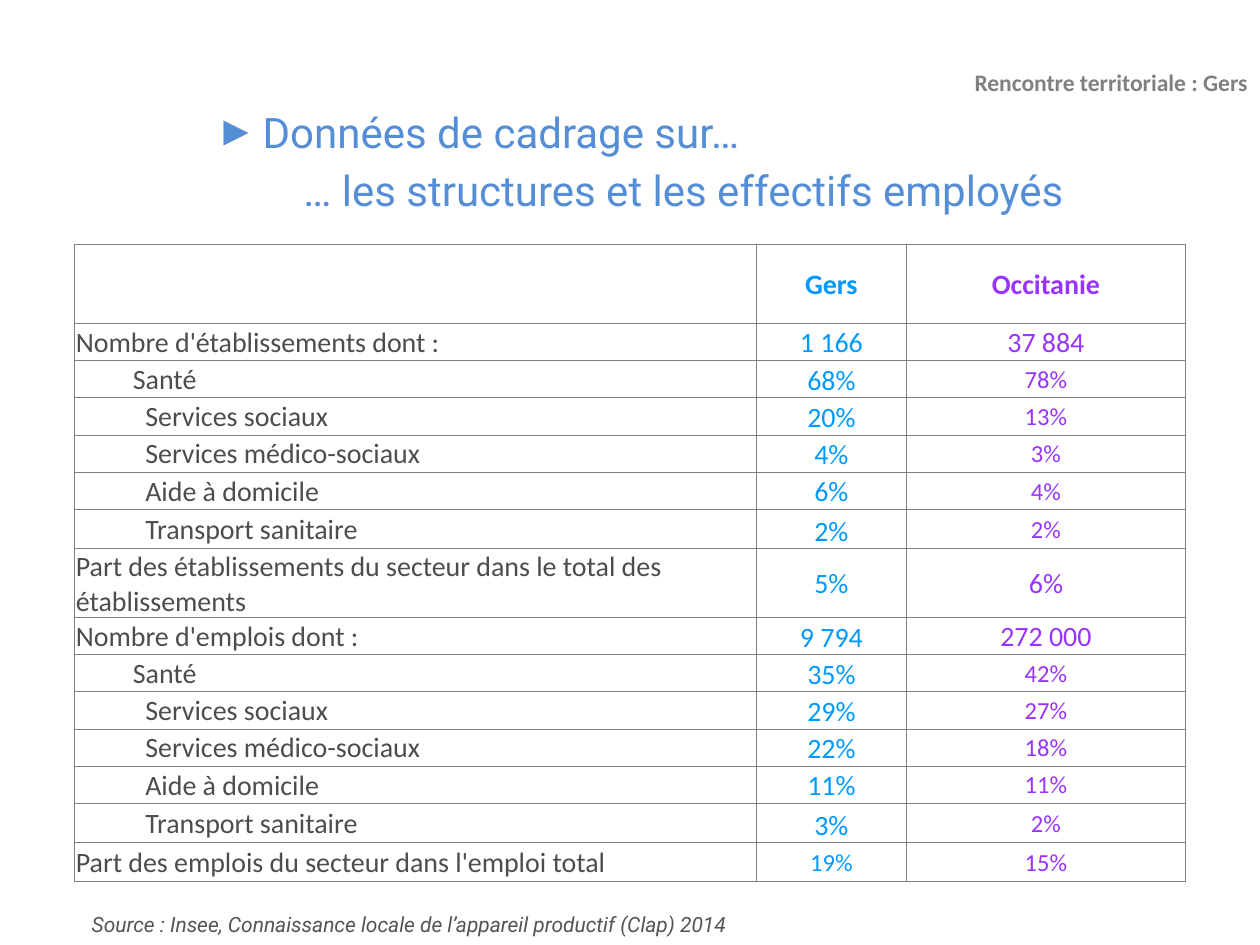
from lxml import etree
from pptx import Presentation
from pptx.dml.color import RGBColor
from pptx.enum.text import MSO_ANCHOR, MSO_AUTO_SIZE, PP_ALIGN
from pptx.oxml.ns import qn
from pptx.util import Cm, Pt

TOP, MIDDLE, BOTTOM = MSO_ANCHOR.TOP, MSO_ANCHOR.MIDDLE, MSO_ANCHOR.BOTTOM
LEFT, CENTER, RIGHT = PP_ALIGN.LEFT, PP_ALIGN.CENTER, PP_ALIGN.RIGHT
NO_AUTOFIT = MSO_AUTO_SIZE.NONE

TITLE_BLUE = RGBColor(0x55, 0x8E, 0xD5)
SOURCE_GREY = RGBColor(0x54, 0x54, 0x54)
HEADER_GREY = RGBColor(0x80, 0x80, 0x80)
LABEL_GREY = RGBColor(0x4D, 0x4D, 0x4D)
GERS_BLUE = RGBColor(0x00, 0x99, 0xFF)
OCCITANIE_PURPLE = RGBColor(0x99, 0x33, 0xFF)
BORDER_GREY = "808080"

COLUMN_WIDTHS = (13.75, 3.02, 5.63)
COLUMN_COLOURS = (LABEL_GREY, GERS_BLUE, OCCITANIE_PURPLE)
INDENTS = {
    "Santé": 1.15,
    "Services sociaux": 1.4,
    "Services médico-sociaux": 1.4,
    "Aide à domicile": 1.4,
    "Transport sanitaire": 1.4,
}
TOTAL_JOBS = "Part des emplois du secteur dans l'emploi total"
ROWS = (
    ("", "Gers", "Occitanie", 1.59),
    ("Nombre d'établissements dont :", "1 166", "37 884", 0.75),
    ("Santé", "68%", "78%", 0.75),
    ("Services sociaux", "20%", "13%", 0.75),
    ("Services médico-sociaux", "4%", "3%", 0.75),
    ("Aide à domicile", "6%", "4%", 0.75),
    ("Transport sanitaire", "2%", "2%", 0.79),
    ("Part des établissements du secteur dans le total des établissements", "5%", "6%", 1.38),
    ("Nombre d'emplois dont :", "9 794", "272 000", 0.75),
    ("Santé", "35%", "42%", 0.75),
    ("Services sociaux", "29%", "27%", 0.75),
    ("Services médico-sociaux", "22%", "18%", 0.75),
    ("Aide à domicile", "11%", "11%", 0.75),
    ("Transport sanitaire", "3%", "2%", 0.79),
    (TOTAL_JOBS, "19%", "15%", 0.79),
)
SECTION_EDGES = {0, 1, 7, 8, 14, 15}
GERS_BOTTOM_ROW = 8


def set_values(target, values):
    for name, value in values.items():
        setattr(target, name, value)


def format_paragraph(paragraph, text, colour, font_values, **paragraph_values):
    set_values(paragraph, paragraph_values)
    run = paragraph.add_run()
    run.text = text
    set_values(run.font, font_values)
    run.font.color.rgb = colour


def add_bullet(paragraph, character, indent):
    properties = paragraph._p.get_or_add_pPr()
    properties.set("marL", str(indent))
    properties.set("indent", str(-indent))
    etree.SubElement(properties, qn("a:buFont")).set("typeface", "Arial")
    etree.SubElement(properties, qn("a:buChar")).set("char", character)


def add_title(slide):
    title = slide.shapes.title
    set_values(title, {"left": Cm(4.09), "top": Cm(2.01), "width": Cm(17.6), "height": Cm(3.2)})
    frame = title.text_frame
    set_values(frame, {"word_wrap": True, "auto_size": NO_AUTOFIT, "vertical_anchor": TOP})
    font = {"name": "Roboto", "size": Pt(24)}
    first = frame.paragraphs[0]
    format_paragraph(first, "Données de cadrage sur…", TITLE_BLUE, font,
                     alignment=LEFT, space_before=Pt(4.8))
    add_bullet(first, "►", Cm(0.95))
    format_paragraph(frame.add_paragraph(), "… les structures et les effectifs employés",
                     TITLE_BLUE, font, alignment=RIGHT, space_before=Pt(4.8))


def add_text(slide, bounds, text, colour, font_values, frame_values, **paragraph_values):
    frame = slide.shapes.add_textbox(*(Cm(value) for value in bounds)).text_frame
    set_values(frame, {"word_wrap": True, **frame_values})
    format_paragraph(frame.paragraphs[0], text, colour, font_values, **paragraph_values)


def set_borders(cell, widths):
    properties = cell._tc.get_or_add_tcPr()
    for side, width in zip("LRTB", widths):
        line = etree.SubElement(properties, qn(f"a:ln{side}"), w=str(Pt(width)))
        fill = etree.SubElement(line, qn("a:solidFill"))
        etree.SubElement(fill, qn("a:srgbClr"), val=BORDER_GREY)


def fill_cell(cell, text, row, column, label):
    detail = label in INDENTS
    inner = 1 if detail else 0.5
    set_borders(cell, (
        1 if column == 0 else inner,
        1 if column == 2 else inner,
        1 if row in SECTION_EDGES else 0.5,
        1 if row + 1 in SECTION_EDGES else 0.5,
    ))
    cell.fill.background()
    bottom = column == 1 and (detail or row == GERS_BOTTOM_ROW)
    indent = INDENTS.get(label, 0) if column == 0 else 0
    set_values(cell, {
        "margin_left": Cm(0.03 + indent),
        "margin_right": Cm(0.03),
        "margin_top": Cm(0.03),
        "margin_bottom": 0,
        "vertical_anchor": BOTTOM if bottom else MIDDLE,
    })
    small = (column == 2 and detail) or (column > 0 and label == TOTAL_JOBS)
    if text:
        font = {"name": "Calibri", "size": Pt(14 if small else 16), "bold": row == 0}
        format_paragraph(cell.text_frame.paragraphs[0], text, COLUMN_COLOURS[column], font,
                         alignment=CENTER if column else LEFT)


def add_figures_table(slide):
    height = sum(row[-1] for row in ROWS)
    table = slide.shapes.add_table(len(ROWS), len(COLUMN_WIDTHS), Cm(1.5), Cm(4.93),
                                   Cm(sum(COLUMN_WIDTHS)), Cm(height)).table
    set_values(table, {"first_row": False, "horz_banding": False})
    for column, width in zip(table.columns, COLUMN_WIDTHS):
        column.width = Cm(width)
    for row, (*texts, row_height) in enumerate(ROWS):
        table.rows[row].height = Cm(row_height)
        for column, text in enumerate(texts):
            fill_cell(table.cell(row, column), text, row, column, texts[0])


def main():
    presentation = Presentation()
    set_values(presentation, {"slide_width": Cm(25.4), "slide_height": Cm(19.05)})
    slide = presentation.slides.add_slide(presentation.slide_layouts[5])
    add_title(slide)
    add_text(slide, (1.6, 18.26, 22.61, 0.79),
             "Source : Insee, Connaissance locale de l’appareil productif (Clap) 2014",
             SOURCE_GREY, {"name": "Roboto", "size": Pt(12), "italic": True}, {},
             space_before=Pt(2.4))
    add_text(slide, (4.5, 0.76, 20.9, 2.36), "Rencontre territoriale : Gers", HEADER_GREY,
             {"name": "Calibri", "size": Pt(13.5), "bold": True},
             {"vertical_anchor": MIDDLE, "margin_bottom": Cm(0.71)}, alignment=RIGHT)
    add_figures_table(slide)
    presentation.save("out.pptx")


if __name__ == "__main__":
    main()
